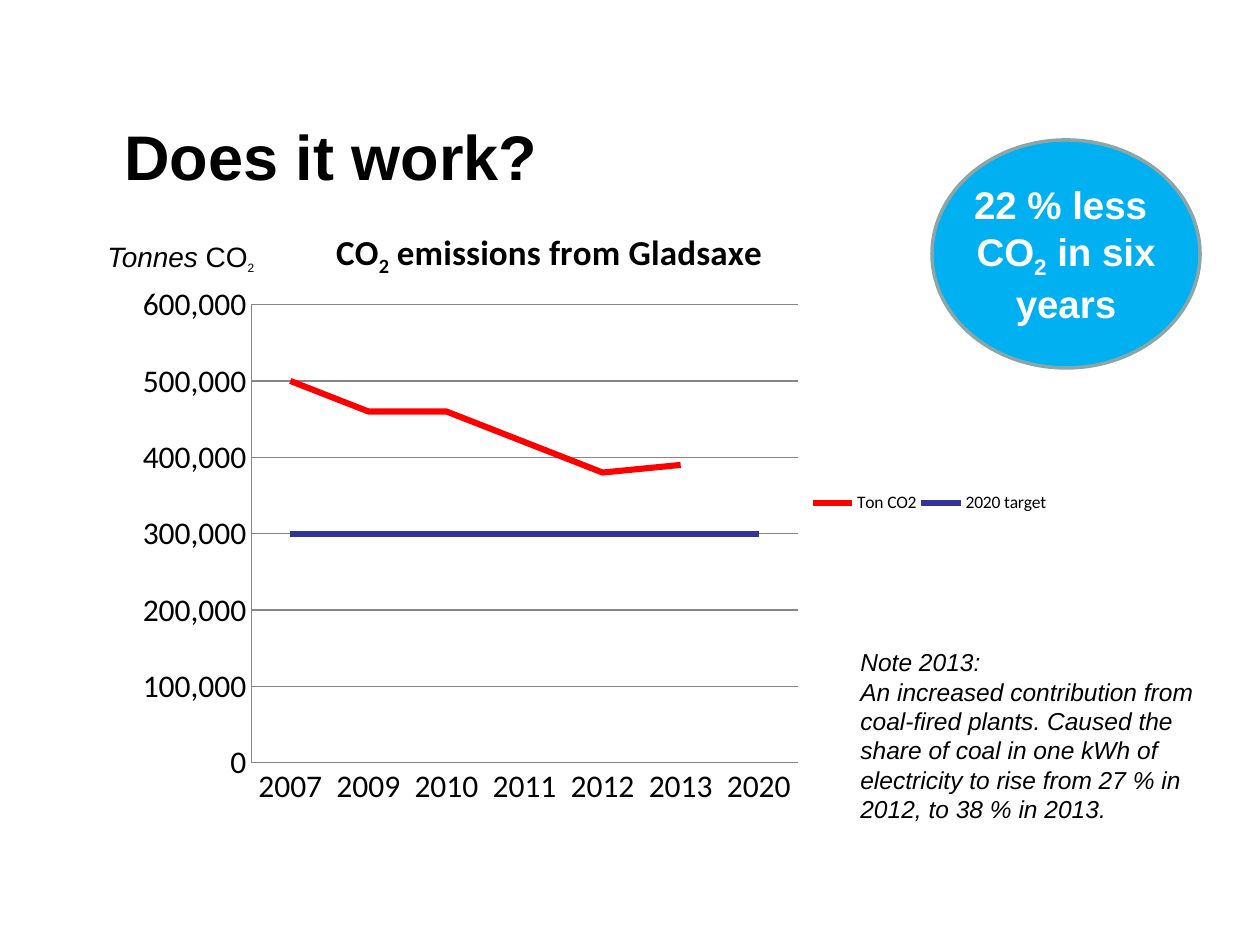
from dataclasses import dataclass

from lxml import etree
from pptx import Presentation
from pptx import util as u
from pptx.chart.data import CategoryChartData
from pptx.dml.color import RGBColor
from pptx.enum import chart as charts, shapes, text
from pptx.oxml.ns import qn

EMU_PER_PX = 914400 / 126
BLACK, WHITE, GREY = "000000", "FFFFFF", "868686"


@dataclass
class Span:
    words: str
    subscript: bool = False
    italic: bool | None = None
    size: int | None = None


@dataclass
class Style:
    size: int
    color: str = BLACK
    bold: bool = False
    italic: bool = False
    name: str = "Arial"


@dataclass
class TextBlock:
    left: int
    top: int
    width: int
    height: int
    style: Style
    paras: list[list[Span]]
    anchor: text.MSO_ANCHOR = text.MSO_ANCHOR.TOP


@dataclass
class Line:
    name: str
    color: str
    values: list[int | None]


TITLE = TextBlock(112, 77, 1013, 157, Style(36, bold=True),
                  [[Span("Does it work?")]], text.MSO_ANCHOR.MIDDLE)
NOTE = TextBlock(848, 641, 377, 190, Style(14, italic=True), [
    [Span("Note 2013:")],
    [Span("An increased contribution from coal-fired plants. Caused the share of coal "
          "in one kWh of electricity to rise from 27 % in 2012, to 38 % in 2013.")],
])
UNIT = TextBlock(95, 233, 179, 47, Style(16), [
    [Span("Tonnes", italic=True), Span(" CO"), Span("2", subscript=True, size=12)],
])
BADGE = TextBlock(932, 140, 268, 228, Style(22, WHITE, bold=True), [
    [Span("22 % less ")],
    [Span("CO"), Span("2", subscript=True), Span(" in six years")],
], text.MSO_ANCHOR.MIDDLE)

CHART_TITLE = [Span("CO"), Span("2", subscript=True), Span(" emissions from Gladsaxe")]
YEARS = ["2007", "2009", "2010", "2011", "2012", "2013", "2020"]
LINES = [
    Line("Ton CO2", "FF0000", [500000, 460000, 460000, 420000, 380000, 390000, None]),
    Line("2020 target", "333399", [300000] * len(YEARS)),
]


def px(length: int) -> u.Emu:
    return u.Emu(round(length * EMU_PER_PX))


def rgb(color: str) -> RGBColor:
    return RGBColor.from_string(color)


def set_font(font, style: Style) -> None:
    font.name, font.size = style.name, u.Pt(style.size)
    font.bold, font.italic = style.bold, style.italic
    font.color.rgb = rgb(style.color)


def set_line(line, color: str, width: float) -> None:
    line.color.rgb = rgb(color)
    line.width = u.Pt(width)


def write_para(para, spans: list[Span], style: Style) -> None:
    set_font(para.font, style)
    for span in spans:
        run = para.add_run()
        run.text = span.words
        if span.italic is not None:
            run.font.italic = span.italic
        if span.size:
            run.font.size = u.Pt(span.size)
        if span.subscript:
            run.font._element.set("baseline", "-25000")


def write_block(frame, block: TextBlock, align: text.PP_ALIGN) -> None:
    frame.word_wrap = True
    frame.vertical_anchor = block.anchor
    for index, spans in enumerate(block.paras):
        para = frame.add_paragraph() if index else frame.paragraphs[0]
        para.alignment = align
        write_para(para, spans, block.style)


def add_text(page, block: TextBlock) -> None:
    box = page.shapes.add_textbox(*map(px, (block.left, block.top, block.width, block.height)))
    write_block(box.text_frame, block, text.PP_ALIGN.LEFT)


def add_badge(page, block: TextBlock) -> None:
    badge = page.shapes.add_shape(
        shapes.MSO_SHAPE.OVAL, *map(px, (block.left, block.top, block.width, block.height)))
    badge.shadow.inherit = False
    badge.fill.solid()
    badge.fill.fore_color.rgb = rgb("00B0F0")
    set_line(badge.line, "8AA6A8", 2)
    frame = badge.text_frame
    frame.margin_left = frame.margin_right = frame.margin_top = frame.margin_bottom = 0
    write_block(frame, block, text.PP_ALIGN.CENTER)


def place(part, index: int, **fractions: float) -> None:
    """Give a chart part a fixed place, as fractions of the chart's size."""
    layout = part.find(qn("c:layout"))
    if layout is None:
        layout = etree.Element(qn("c:layout"))
        part.insert(index, layout)
    for child in list(layout):
        layout.remove(child)
    manual = etree.SubElement(layout, qn("c:manualLayout"))
    if "w" in fractions and part.tag == qn("c:plotArea"):
        etree.SubElement(manual, qn("c:layoutTarget")).set("val", "inner")
    for side in ("xMode", "yMode"):
        etree.SubElement(manual, qn(f"c:{side}")).set("val", "edge")
    for key, value in fractions.items():
        etree.SubElement(manual, qn(f"c:{key}")).set("val", str(value))


def style_axis(axis) -> None:
    axis.major_tick_mark = axis.minor_tick_mark = charts.XL_TICK_MARK.NONE
    set_font(axis.tick_labels.font, Style(18, name="Calibri"))
    set_line(axis.format.line, GREY, 0.75)


def add_emissions_chart(page) -> None:
    data = CategoryChartData(number_format="#,##0")
    data.categories = YEARS
    for line in LINES:
        data.add_series(line.name, line.values)
    chart = page.shapes.add_chart(
        charts.XL_CHART_TYPE.LINE, *map(px, (49, 199, 1012, 640)), data).chart
    set_font(chart.font, Style(10, name="Calibri"))

    chart.has_title = True
    write_para(chart.chart_title.text_frame.paragraphs[0], CHART_TITLE,
               Style(20, bold=True, name="Calibri"))
    place(chart.chart_title._element, 1, x=0.28, y=0.04)

    chart.has_legend = True
    chart.legend.position = charts.XL_LEGEND_POSITION.RIGHT
    chart.legend.include_in_layout = False
    place(chart.legend._element, 1, x=0.75, y=0.45, w=0.24, h=0.05)
    place(chart._chartSpace.chart.plotArea, 0, x=0.2, y=0.165, w=0.54, h=0.716)

    style_axis(chart.category_axis)
    values = chart.value_axis
    style_axis(values)
    values.minimum_scale, values.maximum_scale, values.major_unit = 0, 600000, 100000
    values.tick_labels.number_format = "#,##0"
    values.tick_labels.number_format_is_linked = False
    set_line(values.major_gridlines.format.line, GREY, 0.75)

    for series, line in zip(chart.plots[0].series, LINES):
        series.smooth = False
        series.marker.style = charts.XL_MARKER_STYLE.NONE
        set_line(series.format.line, line.color, 3.5)


def main() -> None:
    deck = Presentation()
    deck.slide_width, deck.slide_height = px(1260), px(945)
    page = deck.slides.add_slide(deck.slide_layouts[6])
    add_text(page, TITLE)
    add_emissions_chart(page)
    add_badge(page, BADGE)
    add_text(page, NOTE)
    add_text(page, UNIT)
    deck.save("out.pptx")


if __name__ == "__main__":
    main()
